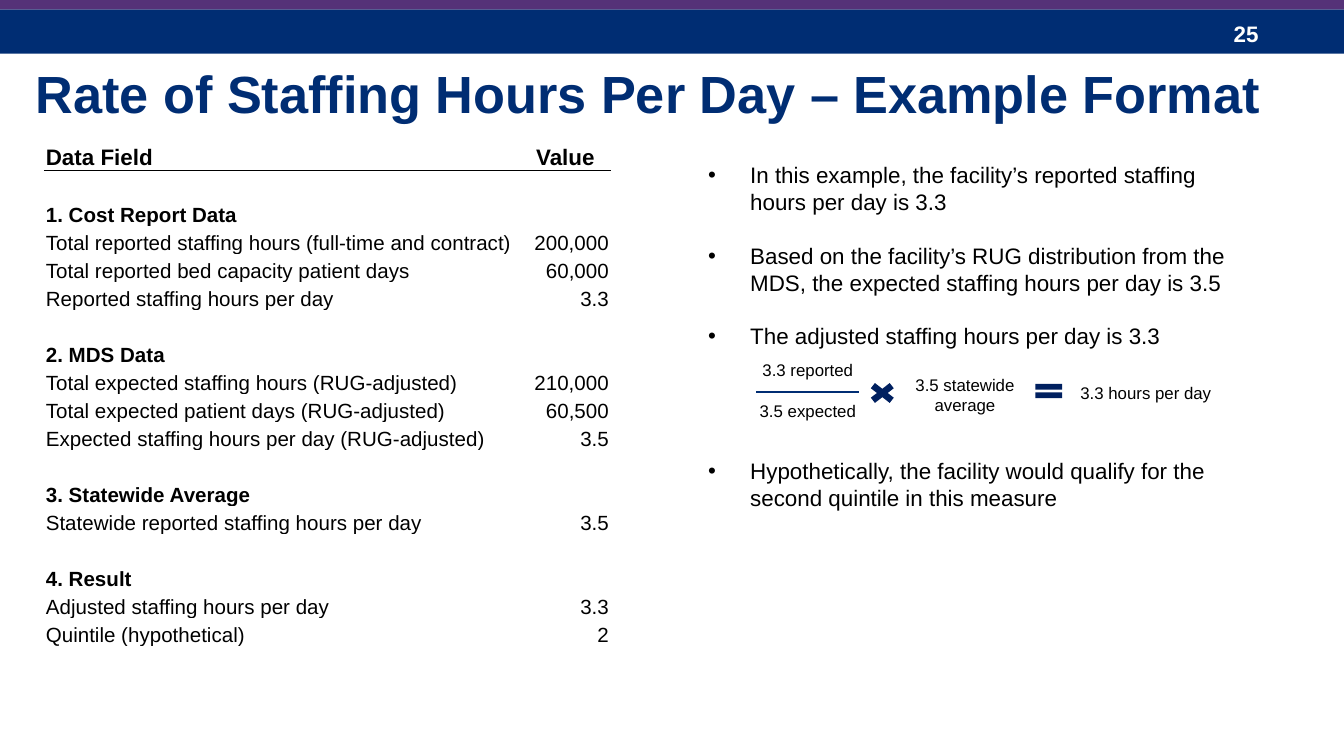
import pptx
import pptx.chart.data
import pptx.dml.color
import pptx.enum.shapes
import pptx.enum.text
import pptx.oxml
import pptx.oxml.ns
import pptx.util
from lxml import etree

Pt = pptx.util.Pt
ALIGN = pptx.enum.text.PP_ALIGN
ANCHOR = pptx.enum.text.MSO_ANCHOR
SHAPE = pptx.enum.shapes.MSO_SHAPE
qn = pptx.oxml.ns.qn

COLORS = {"navy": "002D73", "purple": "553278", "operator": "002060",
          "text": "000000", "white": "FFFFFF"}
FONT = "Arial"

TITLE = "Rate of Staffing Hours Per Day – Example Format"
PAGE = "25"
HEADER = ("Data Field", "Value")
SECTIONS = [
    ("1. Cost Report Data", [
        ("Total reported staffing hours (full-time and contract)", "200,000"),
        ("Total reported bed capacity patient days", "60,000"),
        ("Reported staffing hours per day", "3.3")]),
    ("2. MDS Data", [
        ("Total expected staffing hours (RUG-adjusted)", "210,000"),
        ("Total expected patient days (RUG-adjusted)", "60,500"),
        ("Expected staffing hours per day (RUG-adjusted)", "3.5")]),
    ("3. Statewide Average", [
        ("Statewide reported staffing hours per day", "3.5")]),
    ("4. Result", [
        ("Adjusted staffing hours per day", "3.3"),
        ("Quintile (hypothetical)", "2")]),
]
LINE = 14.4
BODY = [
    ("In this example, the facility’s reported staffing hours per day is 3.3", True, 0),
    ("Based on the facility’s RUG distribution from the MDS, "
     "the expected staffing hours per day is 3.5", True, LINE),
    ("The adjusted staffing hours per day is 3.3", True, LINE),
    ("3.3 hours per day", False, LINE),
    ("Hypothetically, the facility would qualify for the second quintile "
     "in this measure", True, 2 * LINE),
]
SHAPES = [
    (SHAPE.RECTANGLE, "navy", (0, 5, 720, 23.8)),
    (SHAPE.RECTANGLE, "purple", (0, -1.5, 720, 6.5)),
    (SHAPE.MATH_MINUS, "navy", (395.3, 207.4, 74.9, 5)),
    (SHAPE.MATH_MULTIPLY, "operator", (463, 203, 19.4, 15.1)),
    (SHAPE.MATH_EQUAL, "operator", (552.2, 203, 19.4, 13)),
]
SMALL = {"size": 9, "align": ALIGN.CENTER}
TEXT_BOXES = [
    ([PAGE], (653.8, 7.2, 54, 21.6), {"size": 12, "color": "white", "bold": True}),
    (["3.3 reported", "3.5 expected"], (365.8, 189.4, 133.9, 40.3), SMALL),
    (["3.5 statewide average"], (482.4, 197.3, 69.1, 28.8), SMALL),
]


def color_of(name):
    return pptx.dml.color.RGBColor.from_string(COLORS[name])


def place(shape, box):
    for name, value in zip(("left", "top", "width", "height"), box):
        setattr(shape, name, Pt(value))


def write(paragraph, text, size, color="text", bold=False, align=ALIGN.LEFT, before=0):
    run = paragraph.add_run()
    run.text = text
    for name, value in {"name": FONT, "size": Pt(size), "bold": bold}.items():
        setattr(run.font, name, value)
    run.font.color.rgb = color_of(color)
    for name, value in {"alignment": align, "space_before": Pt(before),
                        "space_after": Pt(0)}.items():
        setattr(paragraph, name, value)


def set_frame(frame, anchor=ANCHOR.TOP):
    formats = {"word_wrap": True, "vertical_anchor": anchor,
               "auto_size": pptx.enum.text.MSO_AUTO_SIZE.NONE}
    for name, value in formats.items():
        setattr(frame, name, value)


def paragraph_at(frame, index):
    return frame.paragraphs[0] if index == 0 else frame.add_paragraph()


def set_border(cell, side):
    properties = cell._tc.get_or_add_tcPr()
    line = etree.Element(qn("a:" + side), w=str(Pt(1)))
    fill = etree.SubElement(line, qn("a:solidFill"))
    etree.SubElement(fill, qn("a:srgbClr"), val=COLORS["text"])
    properties.insert(0, line)


def add_data_table(slide):
    rows = [(HEADER, 12, True)]
    for heading, fields in SECTIONS:
        rows += [(("", ""), 11, False), ((heading, ""), 11, True)]
        rows += [(field, 11, False) for field in fields]
    row_height, widths = 15, (255, 48)
    table = slide.shapes.add_table(
        len(rows), 2, Pt(23.9), Pt(76.4), Pt(sum(widths)),
        Pt(row_height * len(rows))).table
    table.first_row = table.horz_banding = False
    for column, width in zip(table.columns, widths):
        column.width = Pt(width)
    for i, (texts, size, bold) in enumerate(rows):
        table.rows[i].height = Pt(row_height)
        for j, text in enumerate(texts):
            cell = table.cell(i, j)
            formats = {"margin_left": Pt(0.7), "margin_right": Pt(0.7),
                       "margin_top": Pt(0.7), "margin_bottom": Pt(0),
                       "vertical_anchor": ANCHOR.BOTTOM}
            for name, value in formats.items():
                setattr(cell, name, value)
            cell.fill.background()
            paragraph = cell.text_frame.paragraphs[0]
            if text:
                value_align = ALIGN.CENTER if i == 0 else ALIGN.RIGHT
                write(paragraph, text, size, bold=bold,
                      align=value_align if j else ALIGN.LEFT)
            else:
                etree.SubElement(paragraph._p, qn("a:endParaRPr"), sz=str(size * 100))
            if i < 2:
                set_border(cell, ("lnB", "lnT")[i])


def fill_body(body):
    place(body, (372.2, 82.8, 306, 275.8))
    set_frame(body.text_frame)
    for i, (text, bulleted, before) in enumerate(BODY):
        paragraph = paragraph_at(body.text_frame, i)
        properties = paragraph._p.get_or_add_pPr()
        margin, indent = (22.5, -22.5) if bulleted else (199.4, 0)
        properties.set("marL", str(Pt(margin)))
        properties.set("indent", str(Pt(indent)))
        if bulleted:
            etree.SubElement(properties, qn("a:buChar"), char="•")
        else:
            etree.SubElement(properties, qn("a:buNone"))
        write(paragraph, text, 12 if bulleted else 9, before=before)
        paragraph.line_spacing = Pt(LINE)


def main():
    presentation = pptx.Presentation()
    presentation.slide_width, presentation.slide_height = Pt(720), Pt(405)
    slide = presentation.slides.add_slide(presentation.slide_layouts[1])

    title = slide.shapes.title
    place(title, (12, 28.8, 696, 41.8))
    set_frame(title.text_frame, ANCHOR.MIDDLE)
    write(title.text_frame.paragraphs[0], TITLE, 28, "navy", True)
    fill_body(slide.placeholders[1])
    add_data_table(slide)

    for kind, color, box in SHAPES:
        shape = slide.shapes.add_shape(kind, *map(Pt, box))
        shape.shadow.inherit = False
        shape.fill.solid()
        shape.fill.fore_color.rgb = color_of(color)
        shape.line.fill.background()

    for texts, box, formats in TEXT_BOXES:
        frame = slide.shapes.add_textbox(*map(Pt, box)).text_frame
        set_frame(frame)
        for i, text in enumerate(texts):
            write(paragraph_at(frame, i), text, before=10.8 * i, **formats)

    presentation.save("out.pptx")


if __name__ == "__main__":
    main()
